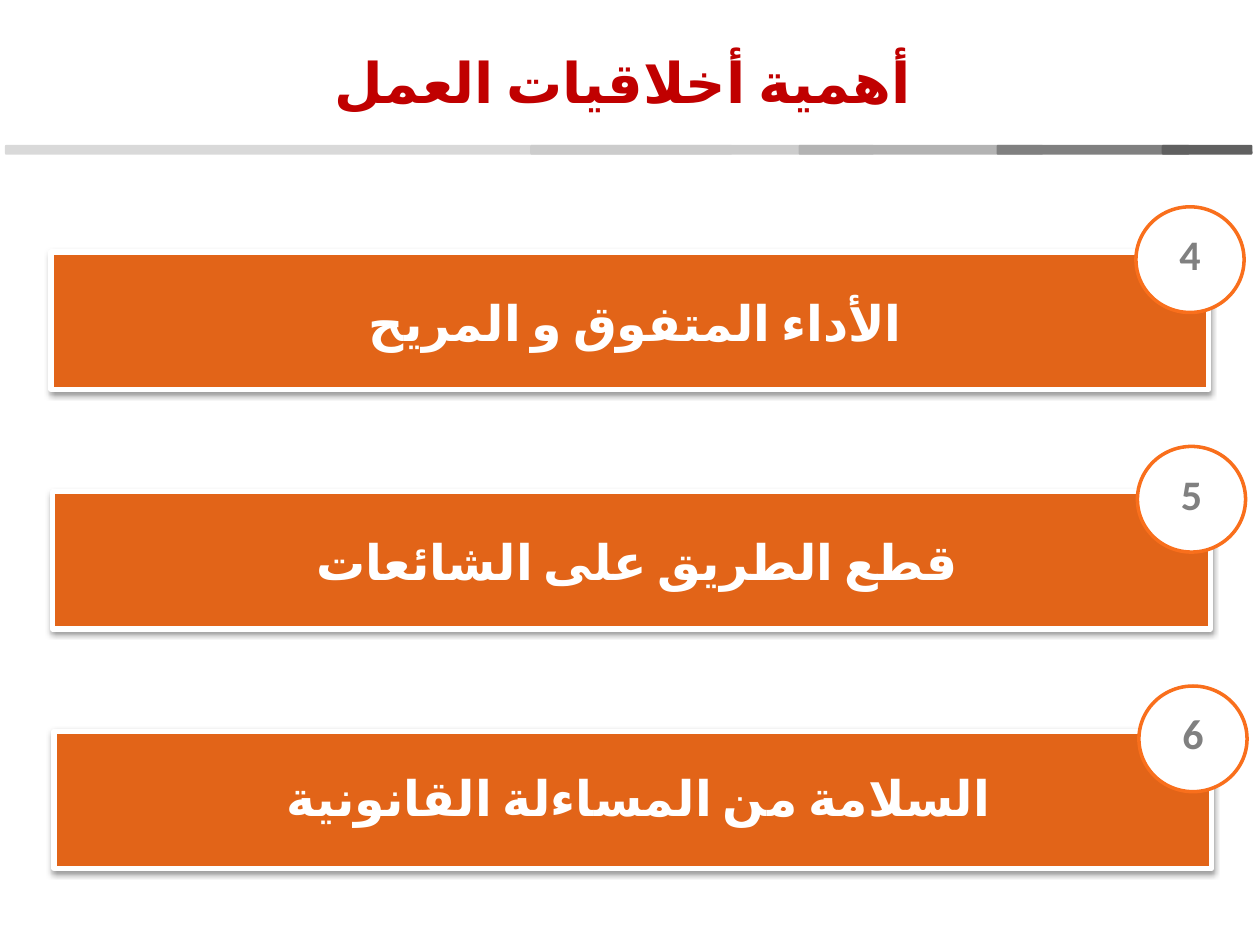
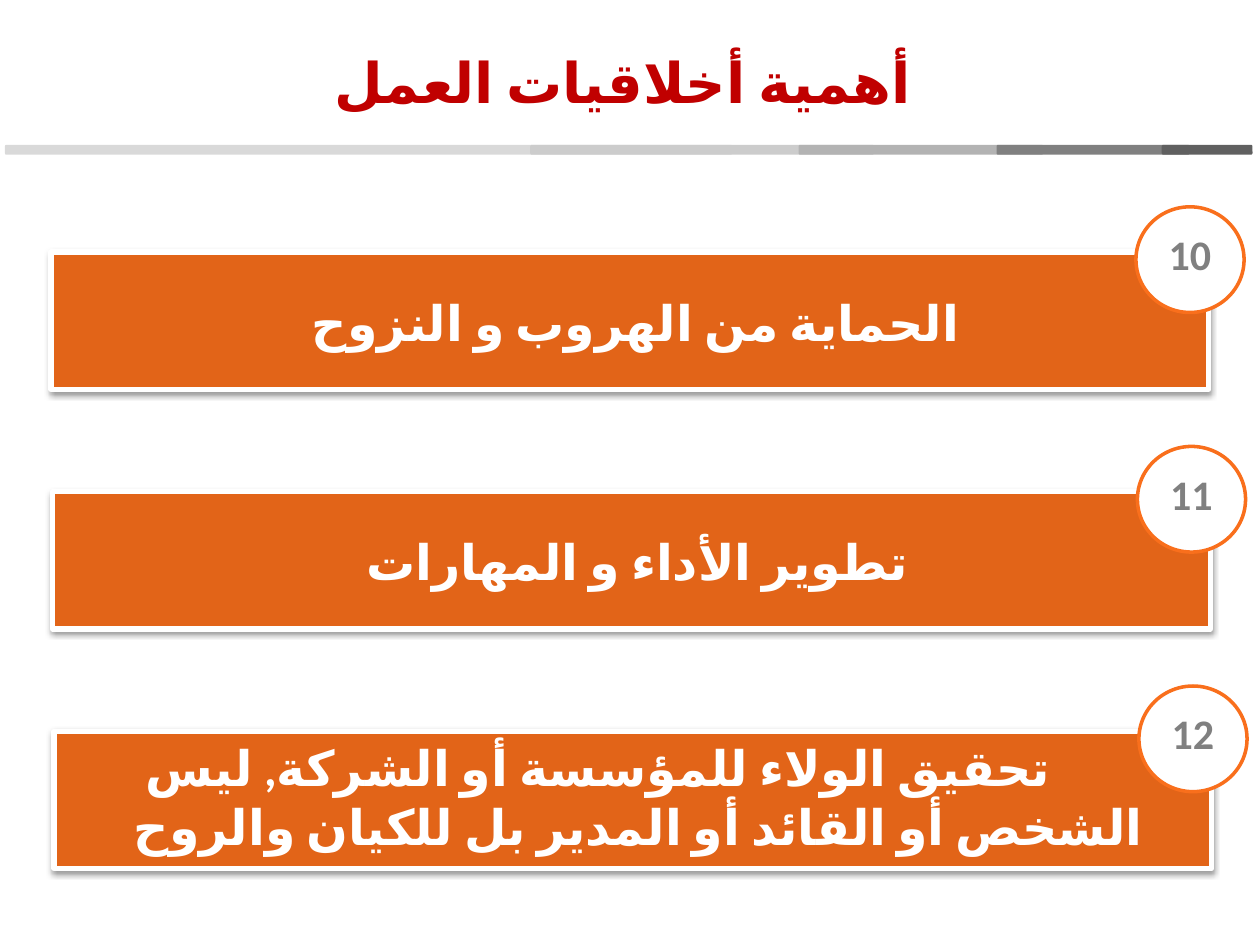
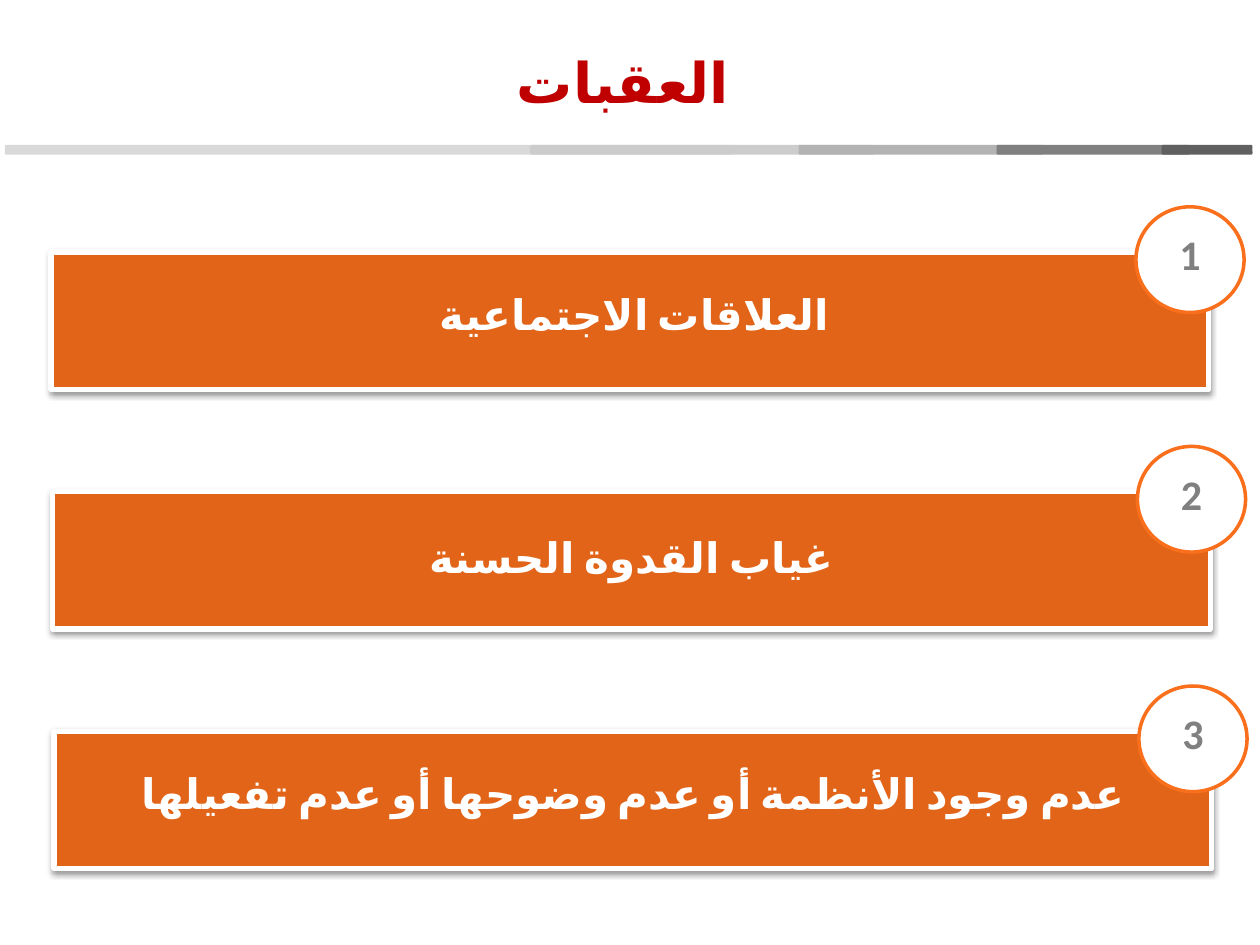
from lxml.etree import SubElement
from pptx import Presentation
from pptx.dml.color import RGBColor
from pptx.enum.lang import MSO_LANGUAGE_ID as Language
from pptx.enum.shapes import MSO_SHAPE as Preset
from pptx.enum.text import MSO_ANCHOR as Anchor, PP_ALIGN as Align
from pptx.oxml.ns import qn
from pptx.util import Cm, Pt

WHITE = RGBColor(0xFF, 0xFF, 0xFF)
TITLE_RED = RGBColor(0xC0, 0x00, 0x00)
BAR_ORANGE = RGBColor(0xE2, 0x64, 0x18)
RING_ORANGE = RGBColor(0xF9, 0x6F, 0x1C)
NUMBER_GRAY = RGBColor(0x80, 0x80, 0x80)
FONT = "Calibri"

HIGH, MIDDLE, LOW = 0.13, 0.73, 0.81

SLIDES = [
    {"title": "أهمية أخلاقيات العمل", "first": 4, "size": 28, "items": [
        ("الأداء المتفوق و المريح ", LOW, 0),
        ("قطع الطريق على الشائعات ", LOW, 0),
        ("السلامة من المساءلة القانونية ", MIDDLE, 0),
    ]},
    {"title": "أهمية أخلاقيات العمل", "first": 10, "size": 28, "items": [
        ("الحماية من الهروب و النزوح ", LOW, 0),
        ("تطوير الأداء و المهارات ", LOW, 0),
        ("تحقيق الولاء للمؤسسة أو الشركة, ليس الشخص أو القائد أو المدير بل للكيان والروح ", HIGH, 1.4),
    ]},
    {"title": "العقبات", "first": 1, "size": 24, "items": [
        ("العلاقات الاجتماعية ", MIDDLE, 0),
        ("غياب القدوة الحسنة", LOW, 0),
        ("عدم وجود الأنظمة أو عدم وضوحها أو عدم تفعيلها", MIDDLE, 0),
    ]},
]

BAND_TOP, BAND_HEIGHT = 2.92, 0.2
BANDS = [
    (0.1, 14.66, RGBColor(0xD9, 0xD9, 0xD9)),
    (10.69, 6.93, RGBColor(0xCC, 0xCC, 0xCC)),
    (16.1, 4.93, RGBColor(0xB3, 0xB3, 0xB3)),
    (20.09, 3.89, RGBColor(0x80, 0x80, 0x80)),
    (23.42, 1.83, RGBColor(0x60, 0x60, 0x60)),
]

ROW_STEP = 4.83
BAR_LEFT, BAR_TOP, BAR_WIDTH, BAR_HEIGHT, BAR_SHIFT = 1.03, 5.08, 23.34, 2.77, 0.03
RING_LEFT, RING_TOP, RING_WIDTH, RING_HEIGHT, RING_SHIFT = 22.9, 4.17, 2.18, 2.13, 0.03


def write(shape, text, size, color, anchor, arabic=True, indent=0):
    frame = shape.text_frame
    frame.word_wrap = True
    frame.vertical_anchor = anchor
    paragraph = frame.paragraphs[0]
    paragraph.text = text
    paragraph.alignment = Align.CENTER
    properties = paragraph._p.get_or_add_pPr()
    if indent:
        properties.set("indent", str(Cm(indent)))
    font = paragraph.font
    font.name, font.size, font.bold = FONT, Pt(size), True
    font.color.rgb = color
    if arabic:
        properties.set("rtl", "1")
        SubElement(properties.find(qn("a:defRPr")), qn("a:cs"), typeface=FONT)
        paragraph.runs[0].font.language_id = Language.ARABIC


def add_filled(slide, preset, box, fill, line=None, line_width=0):
    shape = slide.shapes.add_shape(preset, *map(Cm, box))
    shape.shadow.inherit = False
    shape.fill.solid()
    shape.fill.fore_color.rgb = fill
    if line is None:
        shape.line.fill.background()
    else:
        shape.line.color.rgb = line
        shape.line.width = Pt(line_width)
    return shape


def add_shadow(shape):
    effects = shape._element.spPr.find(qn("a:effectLst"))
    shadow = SubElement(effects, qn("a:outerShdw"), blurRad=str(Pt(3.1)),
                        dist=str(Pt(1.6)), dir="5400000", rotWithShape="0")
    color = SubElement(shadow, qn("a:srgbClr"), val="000000")
    SubElement(color, qn("a:alpha"), val="38000")


def add_header(slide, title):
    for left, width, color in BANDS:
        add_filled(slide, Preset.ROUNDED_RECTANGLE, (left, BAND_TOP, width, BAND_HEIGHT), color)
    title_box = slide.shapes.add_textbox(Cm(3.05), Cm(0.53), Cm(19.02), Cm(2.21))
    write(title_box, title, 32, TITLE_RED, Anchor.MIDDLE)


def add_row(slide, row, number, size, item):
    text, text_top, indent = item
    drop = row * ROW_STEP
    bar_box = (BAR_LEFT + row * BAR_SHIFT, BAR_TOP + drop, BAR_WIDTH, BAR_HEIGHT)
    bar = add_filled(slide, Preset.RECTANGLE, bar_box, BAR_ORANGE, WHITE, 3)
    add_shadow(bar)
    bar.text_frame.margin_top = Cm(text_top)
    write(bar, text, size, WHITE, Anchor.TOP, indent=indent)
    ring_box = (RING_LEFT + row * RING_SHIFT, RING_TOP + drop, RING_WIDTH, RING_HEIGHT)
    ring = add_filled(slide, Preset.OVAL, ring_box, WHITE, RING_ORANGE, 2)
    write(ring, str(number), 24, NUMBER_GRAY, Anchor.TOP, arabic=False)


def main():
    presentation = Presentation()
    presentation.slide_width, presentation.slide_height = Cm(25.4), Cm(19.05)
    for content in SLIDES:
        slide = presentation.slides.add_slide(presentation.slide_layouts[6])
        add_header(slide, content["title"])
        for row, item in enumerate(content["items"]):
            add_row(slide, row, content["first"] + row, content["size"], item)
    presentation.save("out.pptx")


if __name__ == "__main__":
    main()
